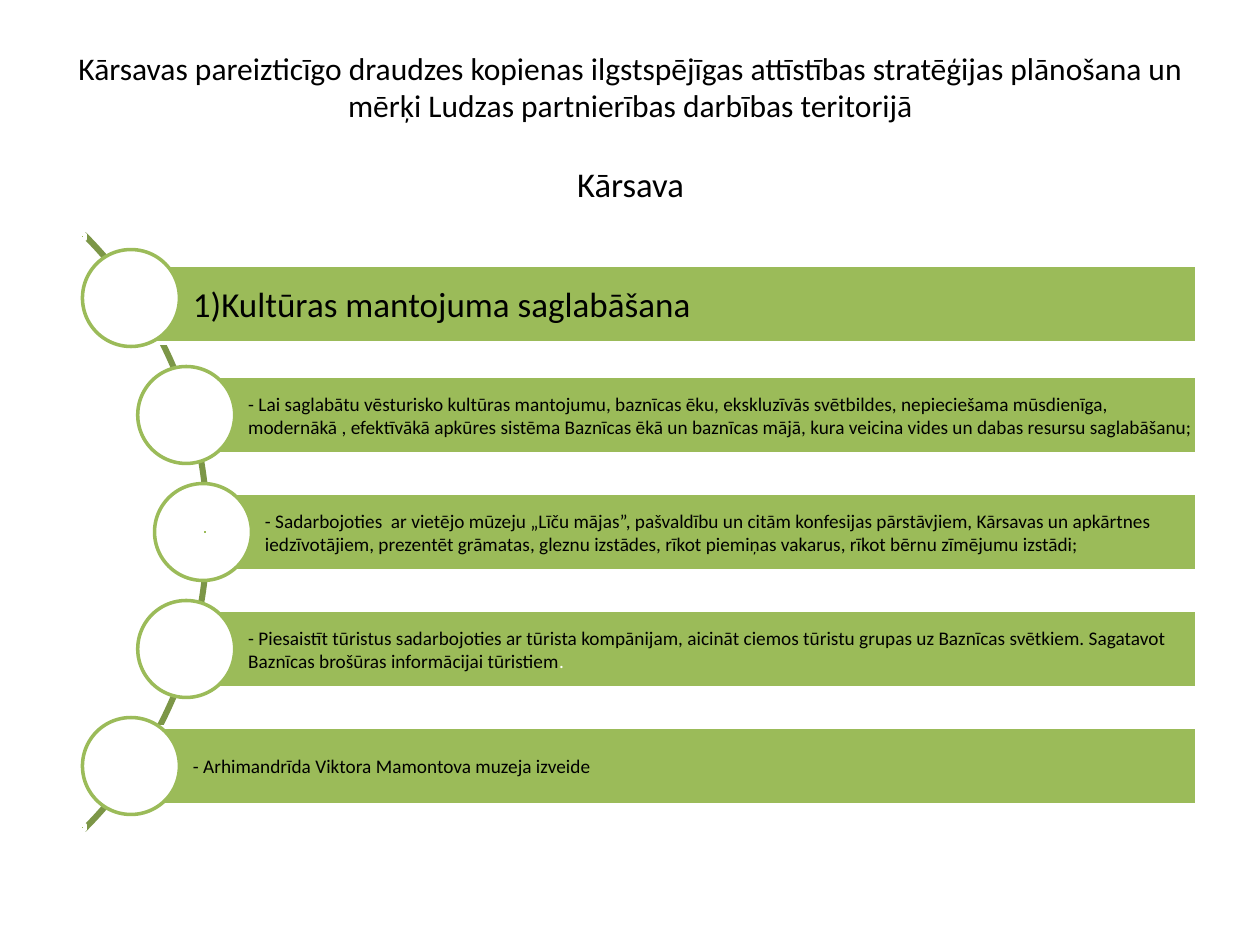
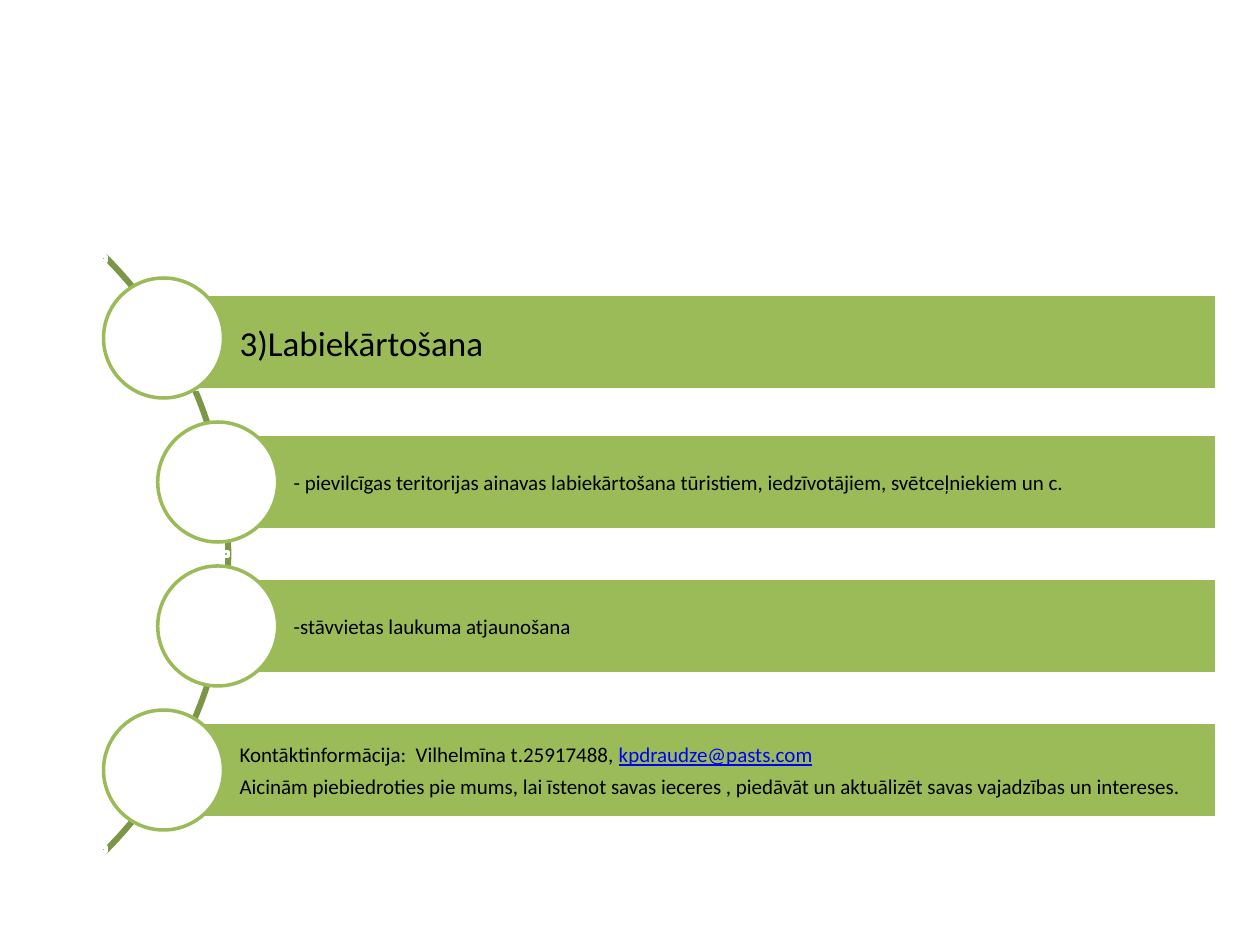
from dataclasses import dataclass
from math import sqrt

from pptx import Presentation
from pptx.dml.color import RGBColor
from pptx.enum.shapes import MSO_SHAPE
from pptx.enum.text import MSO_ANCHOR, MSO_AUTO_SIZE, PP_ALIGN
from pptx.util import Emu, Pt

# Content: a text is a list of paragraphs, a paragraph a list of runs,
# and a run is (words, own format)
TITLE = [
    [("Kārsavas pareizticīgo draudzes kopienas ilgstspējīgas attīstības stratēģijas "
      "plānošana un mērķi Ludzas partnierības darbības teritorijā", {})],
    [("Kārsava", {"size": 19.8})],
]
GOALS = [
    [[("1)Kultūras mantojuma saglabāšana", {})]],
    [[("- Lai saglabātu vēsturisko kultūras mantojumu, baznīcas ēku, ekskluzīvās "
       "svētbildes, nepieciešama mūsdienīga, modernākā , efektīvākā apkūres sistēma "
       "Baznīcas ēkā un baznīcas mājā, kura veicina vides un dabas resursu "
       "saglabāšanu;", {})]],
    [[("- Sadarbojoties  ar vietējo mūzeju „Līču mājas”, pašvaldību un citām konfesijas "
       "pārstāvjiem, Kārsavas un apkārtnes iedzīvotājiem, prezentēt grāmatas, gleznu "
       "izstādes, rīkot piemiņas vakarus, rīkot bērnu zīmējumu izstādi;", {})]],
    [[("- Piesaistīt tūristus sadarbojoties ar tūrista kompānijam, aicināt ciemos "
       "tūristu grupas uz Baznīcas svētkiem. Sagatavot  Baznīcas brošūras "
       "informācijai tūristiem", {}), (".", {"tone": "white"})]],
    [[("- Arhimandrīda Viktora Mamontova muzeja izveide", {})]],
]
GROUNDS = [
    [[("3)Labiekārtošana", {})]],
    [[("- pievilcīgas teritorijas ainavas labiekārtošana tūristiem, iedzīvotājiem, "
       "svētceļniekiem un c.", {})]],
    [[("-stāvvietas laukuma atjaunošana", {})]],
    [[("Kontāktinformācija:  Vilhelmīna t.25917488, ", {}),
      ("kpdraudze@pasts.com", {"tone": "blue", "under": True})],
     [("Aicinām piebiedroties pie mums, lai īstenot savas ieceres , piedāvāt un "
       "aktuālizēt savas vajadzības un intereses.", {})]],
]


@dataclass(frozen=True)
class Theme:
    font: str = "Calibri"
    black: str = "000000"
    white: str = "FFFFFF"
    green: str = "9BBB59"
    olive: str = "7C9647"
    blue: str = "0000FF"
    title: float = 18
    head: float = 20
    line: float = 2


@dataclass(frozen=True)
class Fan:
    mid: tuple    # centre of the arc
    pitch: int    # distance between rows
    disc: int     # diameter of a circle
    bar: int      # height of a bar
    right: int    # right edge of the bars
    drop: int     # how far the first bar sits below its circle's centre
    pad: int      # left inset of the bar text
    size: float   # type size below the first row


THEME = Theme()
PX = 914400 / 126
WIDE, HIGH = 1260, 945
ARC, TRACK, ENDS = 421.5, 416, 418  # radii: arc, circle centres, end marks
DOT = 5


def px(num):
    return Emu(round(num * PX))


def tint(name):
    return RGBColor.from_string(getattr(THEME, name))


def write(frame, paras, size, tone="black", align=PP_ALIGN.LEFT, inset=(4, 4, 4, 4), gap=0):
    frame.word_wrap = True
    frame.auto_size = MSO_AUTO_SIZE.NONE
    frame.vertical_anchor = MSO_ANCHOR.MIDDLE
    (frame.margin_left, frame.margin_top,
     frame.margin_right, frame.margin_bottom) = map(px, inset)
    for i, runs in enumerate(paras):
        para = frame.add_paragraph() if i else frame.paragraphs[0]
        para.alignment = align
        para.space_before = Pt(gap if i else 0)
        for words, own in runs:
            run = para.add_run()
            run.text = words
            font = run.font
            font.name = THEME.font
            font.size = Pt(own.get("size", size))
            font.color.rgb = tint(own.get("tone", tone))
            font.underline = own.get("under", False)


def draw(slide, kind, box, fill, line):
    shape = slide.shapes.add_shape(kind, *map(px, box))
    shape.shadow.inherit = False
    if fill:
        shape.fill.solid()
        shape.fill.fore_color.rgb = tint(fill)
    else:
        shape.fill.background()
    shape.line.color.rgb = tint(line)
    shape.line.width = Pt(THEME.line)
    return shape


def square(x, y, side):
    return x - side / 2, y - side / 2, side, side


def draw_fan(slide, rows, fan):
    cx, cy = fan.mid
    # Arc on the left
    arc = draw(slide, MSO_SHAPE.BLOCK_ARC, square(cx, cy, 2 * ARC), None, "olive")
    for i, value in enumerate((189, 27, 0.003)):
        arc.adjustments[i] = value

    # Bars with text, each led by a circle that follows the arc
    for i, paras in enumerate(rows):
        rise = fan.pitch * (i - (len(rows) - 1) / 2)
        x, y = cx + sqrt(TRACK ** 2 - rise ** 2), cy + rise
        top = y - fan.bar / 2 + (0 if i else fan.drop)
        bar = draw(slide, MSO_SHAPE.RECTANGLE, (x, top, fan.right - x, fan.bar),
                   "green", "white")
        edge = 4 if i else 8
        write(bar.text_frame, paras, fan.size if i else THEME.head,
              inset=(fan.pad, edge, edge, edge), gap=4)
        draw(slide, MSO_SHAPE.OVAL, square(x, y, fan.disc), "white", "green")

    # Marks at the top, middle and foot of the arc
    for turn in (-1, 0, 1):
        rise = turn * ENDS / sqrt(2)
        x = cx + sqrt(ENDS ** 2 - rise ** 2)
        draw(slide, MSO_SHAPE.RECTANGLE, square(x, cy + rise, DOT), "green", "white")


def main():
    deck = Presentation()
    deck.slide_width, deck.slide_height = px(WIDE), px(HIGH)

    # Heritage goals
    slide = deck.slides.add_slide(deck.slide_layouts[5])
    head = slide.shapes.title
    head.left, head.top, head.width, head.height = map(px, (64, 37, 1133, 179))
    write(head.text_frame, TITLE, THEME.title, align=PP_ALIGN.CENTER,
          inset=(10, 6, 10, 6), gap=22)
    draw_fan(slide, GOALS, Fan(mid=(-213, 532), pitch=117, disc=97, bar=78,
                               right=1197, drop=6, pad=62, size=11))

    # Grounds and contact
    slide = deck.slides.add_slide(deck.slide_layouts[6])
    draw_fan(slide, GROUNDS, Fan(mid=(-192, 554), pitch=144, disc=120, bar=95,
                                 right=1217, drop=4, pad=76, size=12))
    deck.save("out.pptx")


if __name__ == "__main__":
    main()
